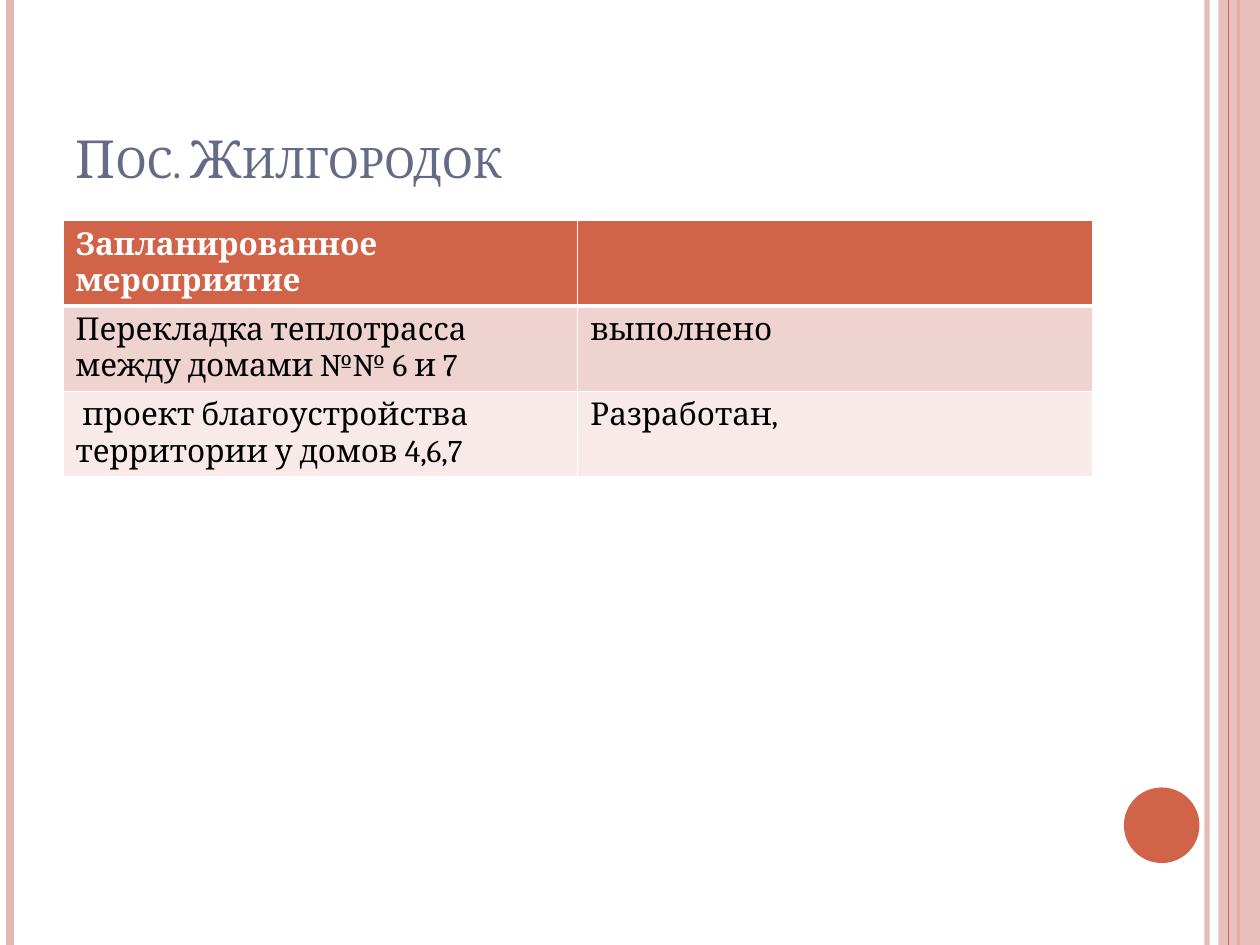
from dataclasses import dataclass

from lxml.etree import SubElement
from pptx import Presentation
from pptx.dml.color import RGBColor
from pptx.enum.shapes import MSO_CONNECTOR, MSO_SHAPE
from pptx.enum.text import MSO_ANCHOR
from pptx.oxml.ns import qn
from pptx.util import Inches, Pt


@dataclass(frozen=True)
class Theme:
    font: str = "Cambria"
    title_size: float = 30
    body_size: float = 18
    title: str = "646B86"
    accent: str = "D16349"
    pale: str = "E5B7B1"
    white: str = "FFFFFF"
    black: str = "000000"
    bands: tuple = ("EED3D0", "F7EAE9")


THEME = Theme()
SLIDE_WIDTH, SLIDE_HEIGHT = 10, 7.5
TITLE = "Пос. Жилгородок"
MEASURES = [
    ("Запланированное мероприятие", ""),
    ("Перекладка теплотрасса между домами №№ 6 и 7", "выполнено"),
    (" проект благоустройства территории у домов 4,6,7", "Разработан,"),
]
STRIPES_BEHIND_BAND = [
    (9.58, THEME.pale, 3, 93),
    (0.08, THEME.pale, 4.5, 100),
    (9.83, THEME.accent, 1.5, 100),
]
STRIPE_ON_BAND = (9.75, THEME.accent, 0.75, 100)


def set_format(target, values):
    for name, value in values.items():
        setattr(target, name, value)


def font_values(size, color, bold=False):
    return {"name": THEME.font, "size": Pt(size), "bold": bold}, color


def format_run(run, size, color, bold=False):
    values, color = font_values(size, color, bold)
    set_format(run.font, values)
    run.font.color.rgb = RGBColor.from_string(color)


def paint(fill, color):
    fill.solid()
    fill.fore_color.rgb = RGBColor.from_string(color)


def set_opacity(element, percent):
    if percent < 100:
        color = next(element.iter(qn("a:srgbClr")))
        SubElement(color, qn("a:alpha"), val=str(percent * 1000))


def add_stripe(slide, x, color, width, opacity):
    stripe = slide.shapes.add_connector(
        MSO_CONNECTOR.STRAIGHT, Inches(x), 0, Inches(x), Inches(SLIDE_HEIGHT)
    )
    stripe.line.width = Pt(width)
    paint(stripe.line.fill, color)
    properties = stripe._element.spPr
    set_opacity(properties, opacity)
    SubElement(properties, qn("a:effectLst"))


def add_decoration(slide, preset, box, color, opacity=100):
    decoration = slide.shapes.add_shape(preset, *map(Inches, box))
    decoration.shadow.inherit = False
    paint(decoration.fill, color)
    decoration.line.fill.background()
    set_opacity(decoration._element.spPr, opacity)


def add_title(slide, text):
    title = slide.shapes.title
    box = map(Inches, (0.5, 0.3, 8.17, 1.25))
    set_format(title, dict(zip(("left", "top", "width", "height"), box)))
    title.text_frame.vertical_anchor = MSO_ANCHOR.BOTTOM
    paragraph = title.text_frame.paragraphs[0]
    paragraph.alignment = 1
    run = paragraph.add_run()
    run.text = text
    format_run(run, THEME.title_size, THEME.title)
    run.font._element.set("cap", "small")


def set_borders(cell, widths):
    properties = cell._tc.get_or_add_tcPr()
    for side, width in widths.items():
        border = SubElement(properties, qn(f"a:ln{side}"), w=str(Pt(width)))
        fill = SubElement(border, qn("a:solidFill"))
        SubElement(fill, qn("a:srgbClr"), val=THEME.white)


def add_measures_table(slide, rows):
    box = map(Inches, (0.5, 1.75, 8.17, 0.67 * len(rows)))
    table = slide.shapes.add_table(len(rows), len(rows[0]), *box).table
    for row_index, texts in enumerate(rows):
        header = row_index == 0
        background = THEME.accent if header else THEME.bands[(row_index - 1) % 2]
        text_color = THEME.white if header else THEME.black
        widths = {"L": 1, "R": 1, "T": 3 if row_index == 1 else 1, "B": 3 if header else 1}
        for column_index, text in enumerate(texts):
            cell = table.cell(row_index, column_index)
            set_borders(cell, widths)
            paint(cell.fill, background)
            if text:
                run = cell.text_frame.paragraphs[0].add_run()
                run.text = text
                format_run(run, THEME.body_size, text_color, header)


def main():
    presentation = Presentation()
    set_format(presentation, {
        "slide_width": Inches(SLIDE_WIDTH),
        "slide_height": Inches(SLIDE_HEIGHT),
    })
    slide = presentation.slides.add_slide(presentation.slide_layouts[5])
    paint(slide.background.fill, THEME.white)
    for stripe in STRIPES_BEHIND_BAND:
        add_stripe(slide, *stripe)
    add_decoration(slide, MSO_SHAPE.RECTANGLE, (9.67, 0, 0.33, SLIDE_HEIGHT), THEME.pale, 87)
    add_stripe(slide, *STRIPE_ON_BAND)
    add_decoration(slide, MSO_SHAPE.OVAL, (8.92, 6.25, 0.6, 0.6), THEME.accent)
    add_title(slide, TITLE)
    add_measures_table(slide, MEASURES)
    presentation.save("out.pptx")


if __name__ == "__main__":
    main()
